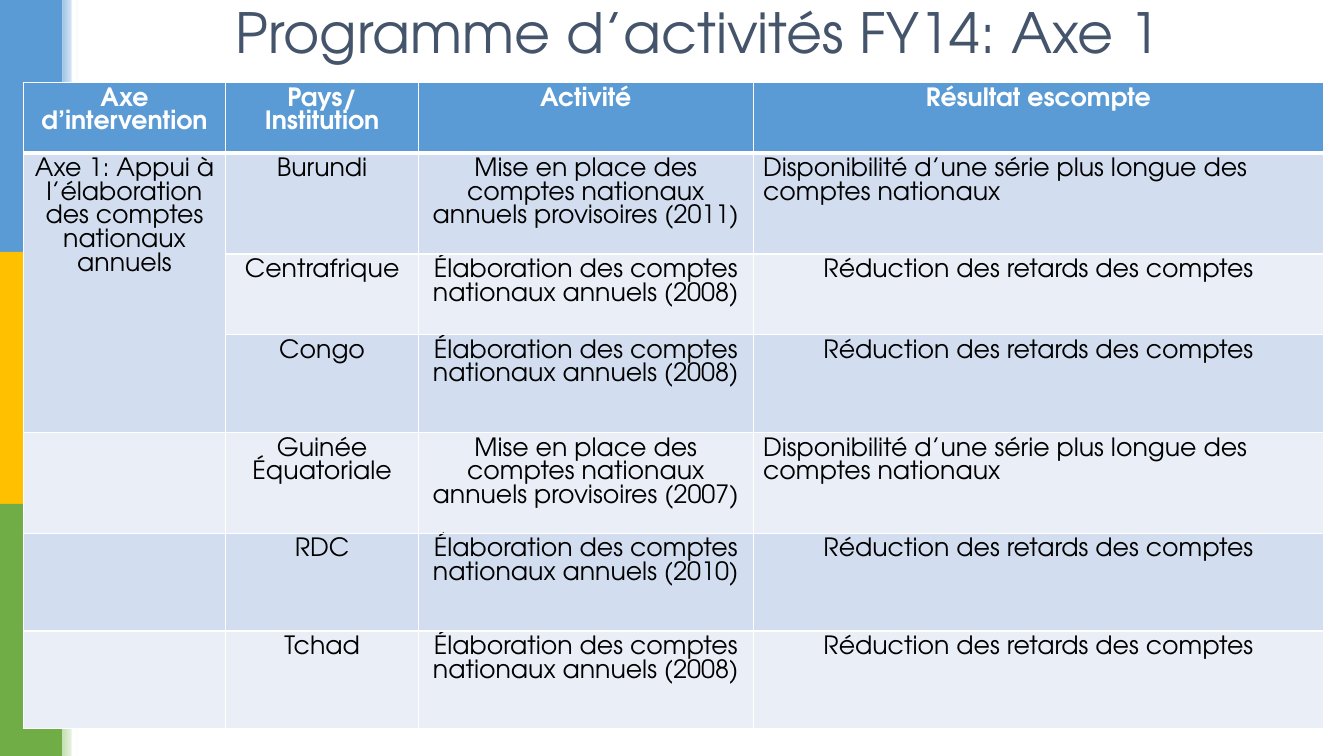
from dataclasses import dataclass

from lxml import etree
from pptx import Presentation
from pptx.dml.color import RGBColor
from pptx.enum.shapes import MSO_SHAPE
from pptx.enum.text import MSO_ANCHOR, PP_ALIGN
from pptx.oxml.ns import qn
from pptx.util import Inches, Pt

RECT = MSO_SHAPE.RECTANGLE
MIDDLE = MSO_ANCHOR.MIDDLE
LEFT, CENTER = PP_ALIGN.LEFT, PP_ALIGN.CENTER

FONT = "TeX Gyre Adventor"
WHITE = RGBColor(0xFF, 0xFF, 0xFF)
BLACK = RGBColor(0x00, 0x00, 0x00)
SLATE = RGBColor(0x44, 0x54, 0x6A)
BLUE = RGBColor(0x5B, 0x9B, 0xD5)
LIGHT_BLUE = RGBColor(0x9D, 0xC3, 0xE6)
GOLD = RGBColor(0xFF, 0xC0, 0x00)
LIGHT_GOLD = RGBColor(0xFF, 0xE6, 0x99)
GREEN = RGBColor(0x70, 0xAD, 0x47)
LIGHT_GREEN = RGBColor(0xC5, 0xE0, 0xB4)
BAND_DARK = RGBColor(0xD2, 0xDE, 0xEF)
BAND_LIGHT = RGBColor(0xEA, 0xEF, 0xF7)

# Slide size and grid, in inches
WIDTH, HEIGHT = 13.33, 7.5
BAND_WIDTH, FADE_WIDTH = 0.62, 0.16
TABLE_LEFT, TABLE_TOP = 0.23, 0.82
COLUMNS = (2.01, 1.91, 3.32, 5.66)
ROWS = (0.7, 1, 0.8, 0.97, 1, 0.97, 0.97)


@dataclass(frozen=True)
class Band:
    color: RGBColor
    fade: RGBColor


@dataclass(frozen=True)
class Activity:
    country: str
    year: int
    provisional: bool = False

    def texts(self) -> tuple[str, str, str]:
        if self.provisional:
            return (self.country,
                    f"Mise en place des comptes nationaux annuels provisoires ({self.year})",
                    "Disponibilité d’une série plus longue des comptes nationaux")
        return (self.country,
                f"Élaboration des comptes nationaux annuels ({self.year})",
                "Réduction des retards des comptes")


BANDS = (Band(BLUE, LIGHT_BLUE), Band(GOLD, LIGHT_GOLD), Band(GREEN, LIGHT_GREEN))
HEADERS = ("Axe d’intervention", "Pays/ Institution", "Activité", "Résultat escompte")
AXIS = "Axe 1: Appui à l’élaboration des comptes nationaux annuels"
AXIS_ROWS = 3
ACTIVITIES = (
    Activity("Burundi", 2011, provisional=True),
    Activity("Centrafrique", 2008),
    Activity("Congo", 2008),
    Activity("Guinée Équatoriale", 2007, provisional=True),
    Activity("RDC", 2010),
    Activity("Tchad", 2008),
)


def write(tf, text: str, *, size: float = 18, color: RGBColor = BLACK,
          bold: bool = False, align=CENTER) -> None:
    p = tf.paragraphs[0]
    p.alignment = align
    p.font.size = Pt(size)
    if text:
        r = p.add_run()
        r.text = text
        r.font.name, r.font.size, r.font.bold = FONT, Pt(size), bold
        r.font.color.rgb = color


def add_rect(slide, left: float, top: float, width: float, height: float,
             color: RGBColor, fade_to: RGBColor | None = None) -> None:
    sp = slide.shapes.add_shape(RECT, *map(Inches, (left, top, width, height)))
    sp.shadow.inherit = False
    sp.line.fill.background()
    if fade_to is None:
        sp.fill.solid()
        sp.fill.fore_color.rgb = color
    else:
        sp.fill.gradient()
        sp.fill.gradient_angle = 0
        for stop, rgb in zip(sp.fill.gradient_stops, (color, fade_to)):
            stop.color.rgb = rgb


def style_cell(cell, fill: RGBColor, top: float = 1, bottom: float = 1) -> None:
    cell.fill.solid()
    cell.fill.fore_color.rgb = fill
    tc_pr = cell._tc.get_or_add_tcPr()
    sides = (("a:lnL", 1), ("a:lnR", 1), ("a:lnT", top), ("a:lnB", bottom))
    for i, (tag, points) in enumerate(sides):
        ln = etree.Element(qn(tag), w=str(Pt(points)))
        solid = etree.SubElement(ln, qn("a:solidFill"))
        etree.SubElement(solid, qn("a:srgbClr"), val=str(WHITE))
        tc_pr.insert(i, ln)


def add_side_bands(slide) -> None:
    height = HEIGHT / len(BANDS)
    for i, band in enumerate(BANDS):
        add_rect(slide, 0, i * height, BAND_WIDTH, height, band.color)
        add_rect(slide, BAND_WIDTH, i * height, FADE_WIDTH, height, band.fade, WHITE)
    add_rect(slide, 0.71, 0, 0.05, HEIGHT, WHITE)


def add_programme(slide) -> None:
    frame = slide.shapes.add_table(
        len(ROWS), len(COLUMNS), Inches(TABLE_LEFT), Inches(TABLE_TOP),
        Inches(sum(COLUMNS)), Inches(sum(ROWS)))
    table = frame.table
    for column, width in zip(table.columns, COLUMNS):
        column.width = Inches(width)
    for row, height in zip(table.rows, ROWS):
        row.height = Inches(height)

    # Header row
    for c, text in enumerate(HEADERS):
        cell = table.cell(0, c)
        style_cell(cell, BLUE, bottom=3)
        write(cell.text_frame, text, color=WHITE, bold=True)

    # Banded activity rows
    for r, activity in enumerate(ACTIVITIES, start=1):
        texts = (AXIS if r == 1 else "", *activity.texts())
        for c, text in enumerate(texts):
            cell = table.cell(r, c)
            style_cell(cell, BAND_DARK if r % 2 else BAND_LIGHT, top=3 if r == 1 else 1)
            is_left = activity.provisional and c == len(COLUMNS) - 1
            write(cell.text_frame, text, align=LEFT if is_left else CENTER)
    table.cell(1, 0).merge(table.cell(AXIS_ROWS, 0))


def add_title(slide) -> None:
    sp = slide.shapes.add_textbox(*map(Inches, (1.17, 0, 11.5, 0.63)))
    tf = sp.text_frame
    tf.word_wrap = True
    tf.vertical_anchor = MIDDLE
    write(tf, "Programme d’activités FY14: Axe 1", size=39.6, color=SLATE)


def main() -> None:
    prs = Presentation()
    prs.slide_width, prs.slide_height = Inches(WIDTH), Inches(HEIGHT)
    slide = prs.slides.add_slide(prs.slide_layouts[6])
    add_side_bands(slide)
    add_programme(slide)
    add_title(slide)
    prs.save("out.pptx")


if __name__ == "__main__":
    main()
